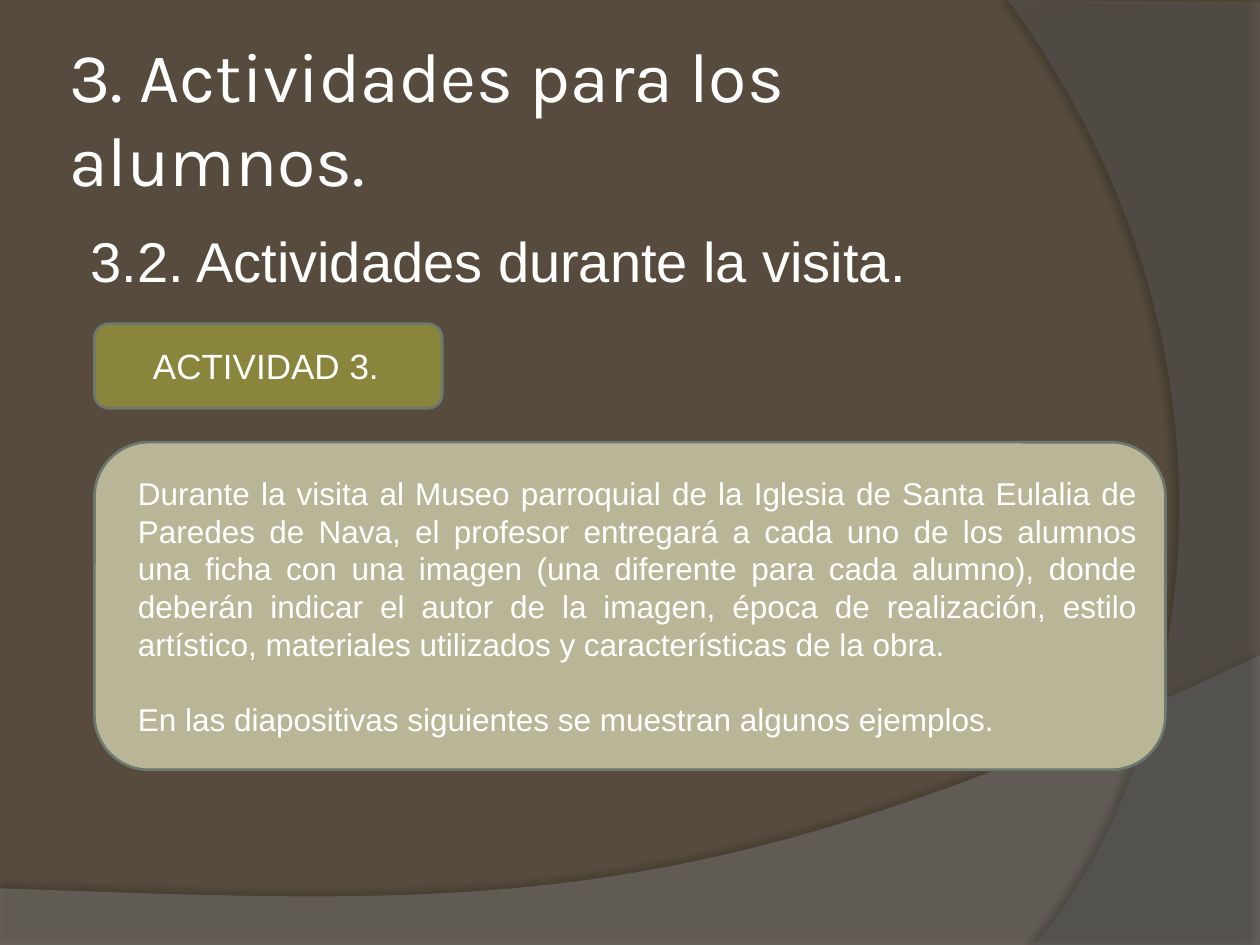
from dataclasses import dataclass

from lxml.etree import Element, SubElement
from pptx import Presentation
from pptx.dml.color import RGBColor
from pptx.enum.shapes import MSO_SHAPE
from pptx.enum.text import MSO_ANCHOR, MSO_AUTO_SIZE, PP_ALIGN
from pptx.oxml.ns import qn
from pptx.util import Pt

PX = 9144


@dataclass(frozen=True)
class Theme:
    """Colours, fonts and type sizes of the slide."""
    background: str = "564B3C"
    lower_wave: str = "7F7F7F"
    side_wave: str = "5E5E5E"
    label: str = "8A853C"
    panel: str = "B9B697"
    outline: str = "6D7871"
    text: str = "FFFFFF"
    heading_font: str = "Karla"
    body_font: str = "Arial"
    title_size: int = 40
    subtitle_size: int = 32
    label_size: int = 20
    body_size: int = 18


THEME = Theme()


def paint(fill, color):
    """Give a fill one solid colour."""
    fill.solid()
    fill.fore_color.rgb = RGBColor.from_string(color)


def place(shape, *box):
    """Set left, top, width and height in px."""
    shape.left, shape.top, shape.width, shape.height = (value * PX for value in box)


def bend_last_line(shape, controls, end):
    """Turn the last straight segment of an outline into a cubic curve."""
    line = shape.element.findall(".//" + qn("a:lnTo"))[-1]
    bend = Element(qn("a:cubicBezTo"))
    left, top = shape.left // PX, shape.top // PX
    for x, y in (*controls, end):
        SubElement(bend, qn("a:pt"), x=str(x - left), y=str(y - top))
    line.getparent().replace(line, bend)


def add_shadow(shape, opacity, distance, direction):
    """Give a shape a soft black shadow."""
    shape.shadow.inherit = False
    effects = shape.element.spPr.find(qn("a:effectLst"))
    shadow = SubElement(effects, qn("a:outerShdw"), blurRad=str(Pt(4)),
                        dist=str(Pt(distance)), dir=str(direction * 60000),
                        algn="ctr", rotWithShape="0")
    color = SubElement(shadow, qn("a:srgbClr"), val="000000")
    SubElement(color, qn("a:alpha"), val=str(opacity * 1000))


def add_wave(slide, corners, controls, color, opacity):
    """Add a translucent outline whose last side is curved."""
    builder = slide.shapes.build_freeform(*corners[0], scale=PX)
    builder.add_line_segments(corners[1:], close=True)
    shape = builder.convert_to_shape()
    bend_last_line(shape, controls, corners[-1])
    paint(shape.fill, color)
    shape.line.fill.background()
    fill_color = shape.element.spPr.find(qn("a:solidFill"))[0]
    SubElement(fill_color, qn("a:alpha"), val=str(opacity * 1000))
    return shape


def write(shape, lines, size, font, align, anchor, indent=0):
    """Fill a shape with formatted paragraphs."""
    frame = shape.text_frame
    frame.text = "\n".join(lines)
    frame.word_wrap = True
    frame.auto_size = MSO_AUTO_SIZE.NONE
    frame.vertical_anchor = anchor
    for paragraph in frame.paragraphs:
        paragraph.alignment = align
        paragraph._p.get_or_add_pPr().set("marL", str(indent * PX))
        for run in paragraph.runs:
            run.font.size = Pt(size)
            run.font.name = font
            run.font.color.rgb = RGBColor.from_string(THEME.text)
    return frame


def add_title(slide, text, box):
    """Format the title placeholder and lift it above the waves."""
    title = slide.shapes.title
    place(title, *box)
    frame = write(title, [text], THEME.title_size, THEME.heading_font,
                  PP_ALIGN.LEFT, MSO_ANCHOR.MIDDLE)
    frame.margin_left = frame.margin_right = 5 * PX
    title.element.getparent().append(title.element)


def add_subtitle(slide, text, box):
    """Add the section heading."""
    shape = slide.shapes.add_textbox(*(value * PX for value in box))
    frame = write(shape, [text], THEME.subtitle_size, THEME.body_font,
                  PP_ALIGN.JUSTIFY, MSO_ANCHOR.TOP, 12)
    frame.paragraphs[0].space_before = Pt(3)


def add_card(slide, lines, box, color, size, align, indent):
    """Add a rounded card with text."""
    shape = slide.shapes.add_shape(MSO_SHAPE.ROUNDED_RECTANGLE,
                                   *(value * PX for value in box))
    paint(shape.fill, color)
    paint(shape.line.fill, THEME.outline)
    shape.line.width = Pt(1.5)
    shape.shadow.inherit = False
    return write(shape, lines, size, THEME.body_font, align,
                 MSO_ANCHOR.MIDDLE, indent)


def main():
    """Build and save the slide."""
    presentation = Presentation()
    presentation.slide_width, presentation.slide_height = 1000 * PX, 750 * PX
    slide = presentation.slides.add_slide(presentation.slide_layouts[5])
    paint(slide.background.fill, THEME.background)

    lower = add_wave(slide, [(1000, 520), (1000, 751), (0, 751), (0, 705)][::-1]
                     + [(0, 705)], [(559, 729), (391, 719)], THEME.lower_wave, 45)
    add_shadow(lower, 35, 3.5, 270)
    side = add_wave(slide, [(1000, 2), (1000, 750), (821, 750), (800, 0)],
                    [(935, 619), (1018, 300)], THEME.side_wave, 40)
    add_shadow(side, 45, 4, 180)

    add_title(slide, "3. Actividades para los alumnos.", (50, 30, 817, 125))
    add_subtitle(slide, "3.2. Actividades durante la visita. ", (50, 175, 867, 495))
    add_card(slide, ["ACTIVIDAD 3. "], (75, 257, 276, 67), THEME.label,
             THEME.label_size, PP_ALIGN.CENTER, 4)
    panel = add_card(slide, [
        "Durante la visita al Museo parroquial de la Iglesia de Santa Eulalia de "
        "Paredes de Nava, el profesor entregará a cada uno de los alumnos una ficha "
        "con una imagen (una diferente para cada alumno), donde deberán indicar el "
        "autor de la imagen, época de realización, estilo artístico, materiales "
        "utilizados y características de la obra. ",
        "En las diapositivas siguientes se muestran algunos ejemplos. ",
    ], (75, 351, 850, 260), THEME.panel, THEME.body_size, PP_ALIGN.JUSTIFY, 12)
    panel.paragraphs[1].space_before = Pt(21.5)
    presentation.save("out.pptx")


if __name__ == "__main__":
    main()
